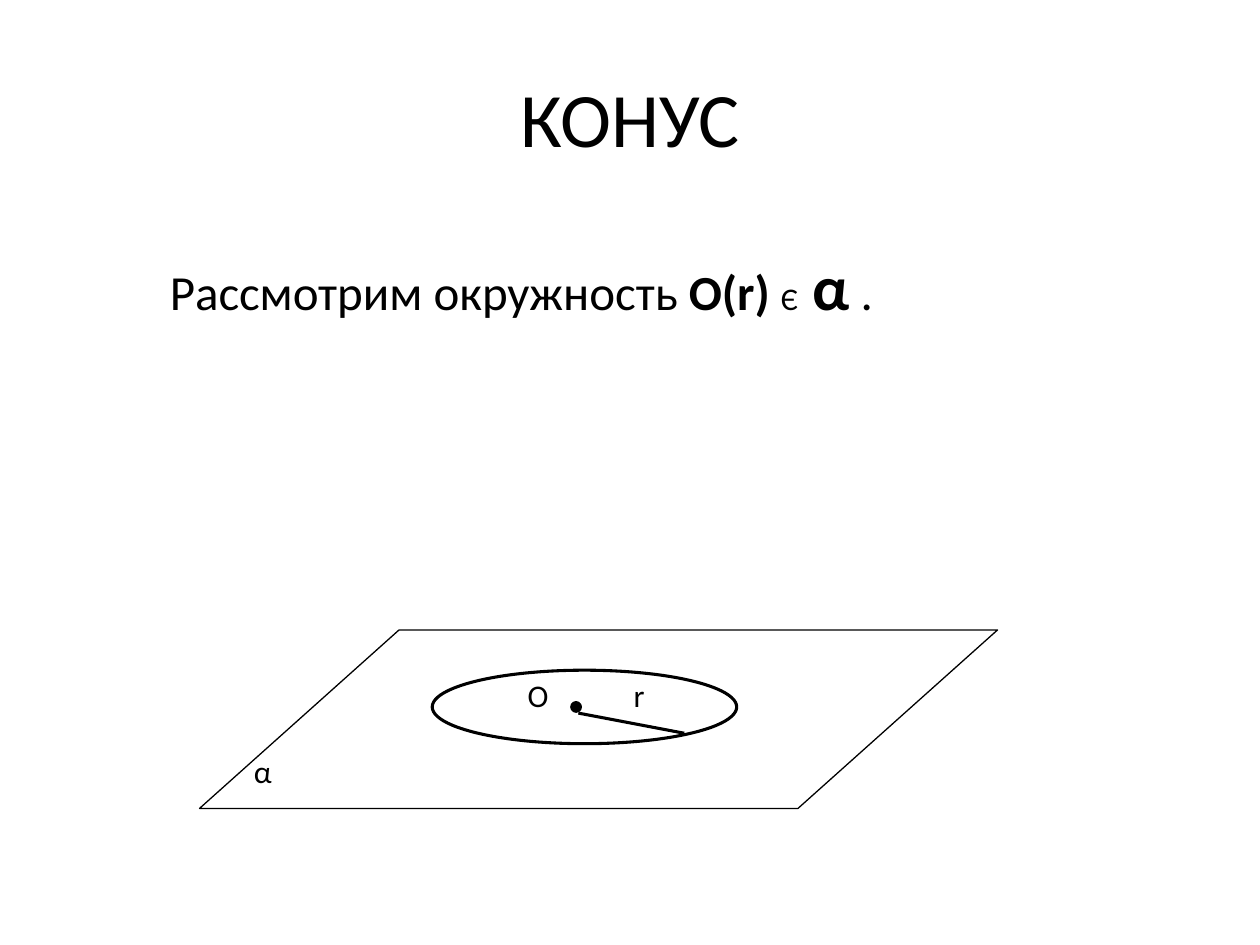
from collections import namedtuple
from dataclasses import dataclass

from lxml.etree import SubElement
from pptx import Presentation
from pptx.dml.color import RGBColor
from pptx.enum.shapes import MSO_CONNECTOR as Connector, MSO_SHAPE as Preset
from pptx.enum.text import MSO_ANCHOR as Anchor, MSO_AUTO_SIZE as AutoSize, PP_ALIGN as Align
from pptx.oxml.ns import qn
from pptx.util import Pt

Box = namedtuple("Box", "left top width height")


@dataclass(frozen=True)
class Theme:
    font: str = "Calibri"
    ink: RGBColor = RGBColor(0, 0, 0)
    paper: RGBColor = RGBColor(255, 255, 255)
    title: int = 44
    symbol: int = 36
    statement: int = 28
    label: int = 18
    thin: float = 0.75
    thick: float = 1.75


THEME = Theme()


def points(*lengths):
    return [Pt(length) for length in lengths]


def add_run(paragraph, text, size, bold=False):
    run = paragraph.add_run()
    run.text = text
    run.font.name = THEME.font
    run.font.size = Pt(size)
    run.font.bold = bold
    run.font.color.rgb = THEME.ink


def add_text(shapes, box, runs, wrap=True):
    frame = shapes.add_textbox(*points(*box)).text_frame
    frame.word_wrap = wrap
    frame.auto_size = AutoSize.SHAPE_TO_FIT_TEXT
    for run in runs:
        add_run(frame.paragraphs[0], *run)


def add_outline(shapes, preset, box, weight, fill=None):
    shape = shapes.add_shape(preset, *points(*box))
    shape.shadow.inherit = False
    if fill is None:
        shape.fill.background()
    else:
        shape.fill.solid()
        shape.fill.fore_color.rgb = fill
    shape.line.color.rgb = THEME.ink
    shape.line.width = Pt(weight)
    return shape


def place_title(slide, box):
    title = slide.shapes.title
    title.left, title.top, title.width, title.height = points(*box)
    title.text_frame.vertical_anchor = Anchor.MIDDLE
    heading = title.text_frame.paragraphs[0]
    heading.alignment = Align.CENTER
    add_run(heading, "КОНУС", THEME.title)


def place_statement(slide, box):
    add_text(slide.shapes, box, [
        ("Рассмотрим окружность ", THEME.statement),
        ("О(r) ", THEME.statement, True),
        ("Є", THEME.label),
        (" α", THEME.symbol, True),
        (" .", THEME.statement),
    ])


def place_plane(slide, box):
    plane = add_outline(slide.shapes, Preset.PARALLELOGRAM, box, THEME.thin, THEME.paper)
    plane.adjustments[0] = 1.118
    add_text(slide.shapes, Box(box.left + 24, box.top + 66, 36, 36), [("α", THEME.label)])


def place_circle(slide, box):
    shapes = slide.shapes.add_group_shape().shapes
    left, top = box.left, box.top
    add_outline(shapes, Preset.OVAL, box, THEME.thick)

    # Radius and centre point
    radius = shapes.add_connector(
        Connector.STRAIGHT, *points(left + 83.5, top + 24.5, left + 144, top + 36))
    radius.line.color.rgb = THEME.ink
    radius.line.width = Pt(THEME.thick)
    SubElement(radius.element.spPr, qn("a:effectLst"))
    add_outline(shapes, Preset.OVAL, Box(left + 79.2, top + 18, 6, 6), THEME.thin, THEME.ink)

    # Letters
    add_text(shapes, Box(left + 47.5, top, 36, 36), [("О", THEME.label)])
    add_text(shapes, Box(left + 108, top, 22.3, 36), [("r", THEME.label)], wrap=False)


def main():
    deck = Presentation()
    deck.slide_width, deck.slide_height = points(720, 540)
    slide = deck.slides.add_slide(deck.slide_layouts.get_by_name("Title Only"))
    place_title(slide, Box(36, 21.6, 648, 90))
    place_plane(slide, Box(114, 360, 456, 102))
    place_statement(slide, Box(90, 138, 486, 50.4))
    place_circle(slide, Box(247, 383, 174, 42))
    deck.save("out.pptx")


if __name__ == "__main__":
    main()
